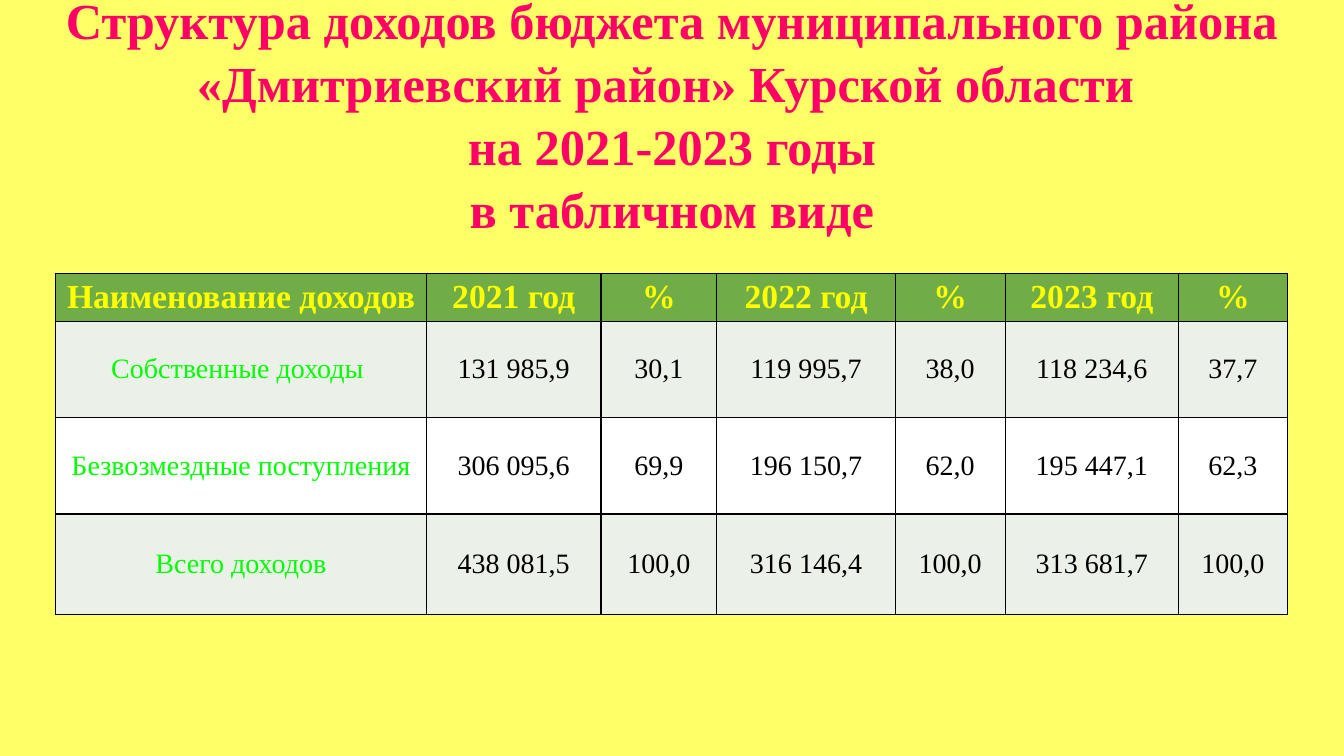
from lxml import etree
from pptx import Presentation
from pptx import util as u
from pptx.dml.color import RGBColor
from pptx.enum import text
from pptx.oxml.ns import qn

FONT = "Times New Roman"
TITLE = ("Структура доходов бюджета муниципального района "
         "«Дмитриевский район» Курской области \v"
         "на 2021-2023 годы\vв табличном виде")
COLUMN_WIDTHS = [3.68, 1.73, 1.15, 1.77, 1.09, 1.72, 1.08]
ROW_HEIGHTS = [0.47, 0.95, 0.96, 1]
INCOME = [
    ["Наименование доходов", "2021 год", "%", "2022 год", "%", "2023 год", "%"],
    ["Собственные доходы ", "131 985,9", "30,1", "119 995,7", "38,0", "118 234,6", "37,7"],
    ["Безвозмездные поступления", "306 095,6", "69,9", "196 150,7", "62,0", "195 447,1", "62,3"],
    ["Всего доходов", "438 081,5", "100,0", "316 146,4", "100,0", "313 681,7", "100,0"],
]


def paint(target, color):
    """Give a fill a solid colour."""
    target.solid()
    target.fore_color.rgb = RGBColor.from_string(color)


def style(para, size, color, bold=False):
    para.alignment = text.PP_ALIGN.CENTER
    para.font.name = FONT
    para.font.size = u.Pt(size)
    para.font.bold = bold
    para.font.color.rgb = RGBColor.from_string(color)


def add_borders(cell, color="000000", width=1):
    properties = cell._tc.get_or_add_tcPr()
    for index, side in enumerate(("a:lnL", "a:lnR", "a:lnT", "a:lnB")):
        line = etree.Element(qn(side), w=str(u.Pt(width)))
        fill = etree.SubElement(line, qn("a:solidFill"))
        etree.SubElement(fill, qn("a:srgbClr"), val=color)
        properties.insert(index, line)  # borders precede the fill


def add_title(page, left, top, width, height):
    box = page.shapes.add_textbox(*map(u.Inches, (left, top, width, height)))
    frame = box.text_frame
    frame.word_wrap = True
    frame.vertical_anchor = text.MSO_ANCHOR.MIDDLE
    frame.text = TITLE
    para = frame.paragraphs[0]
    para.line_spacing = 1.04
    style(para, 36, "FF0066", bold=True)


def add_income_table(page, left, top):
    size = sum(COLUMN_WIDTHS), sum(ROW_HEIGHTS)
    table = page.shapes.add_table(len(INCOME), len(COLUMN_WIDTHS),
                                  *map(u.Inches, (left, top, *size))).table
    for column, width in zip(table.columns, COLUMN_WIDTHS):
        column.width = u.Inches(width)
    for row_index, (row, values) in enumerate(zip(table.rows, INCOME)):
        row.height = u.Inches(ROW_HEIGHTS[row_index])
        for column_index, value in enumerate(values):
            cell = table.cell(row_index, column_index)
            cell.text = value
            cell.vertical_anchor = text.MSO_ANCHOR.MIDDLE
            cell.margin_left = cell.margin_right = u.Inches(0.07)
            cell.margin_top = cell.margin_bottom = u.Inches(0.04)
            para = cell.text_frame.paragraphs[0]
            if row_index == 0:
                paint(cell.fill, "70AD47")
                style(para, 24, "FFFF00", bold=True)
            else:
                paint(cell.fill, "EBF1E9" if row_index % 2 else "FFFFFF")
                style(para, 20, "000000" if column_index else "00FF00")
            add_borders(cell)


def main():
    deck = Presentation()
    deck.slide_width, deck.slide_height = u.Inches(13.33), u.Inches(7.5)
    page = deck.slides.add_slide(deck.slide_layouts[6])
    paint(page.background.fill, "FFFF66")
    # Heading above the income table
    add_title(page, 0, 0, 13.33, 2.24)
    add_income_table(page, 0.55, 2.71)
    deck.save("out.pptx")


if __name__ == "__main__":
    main()
